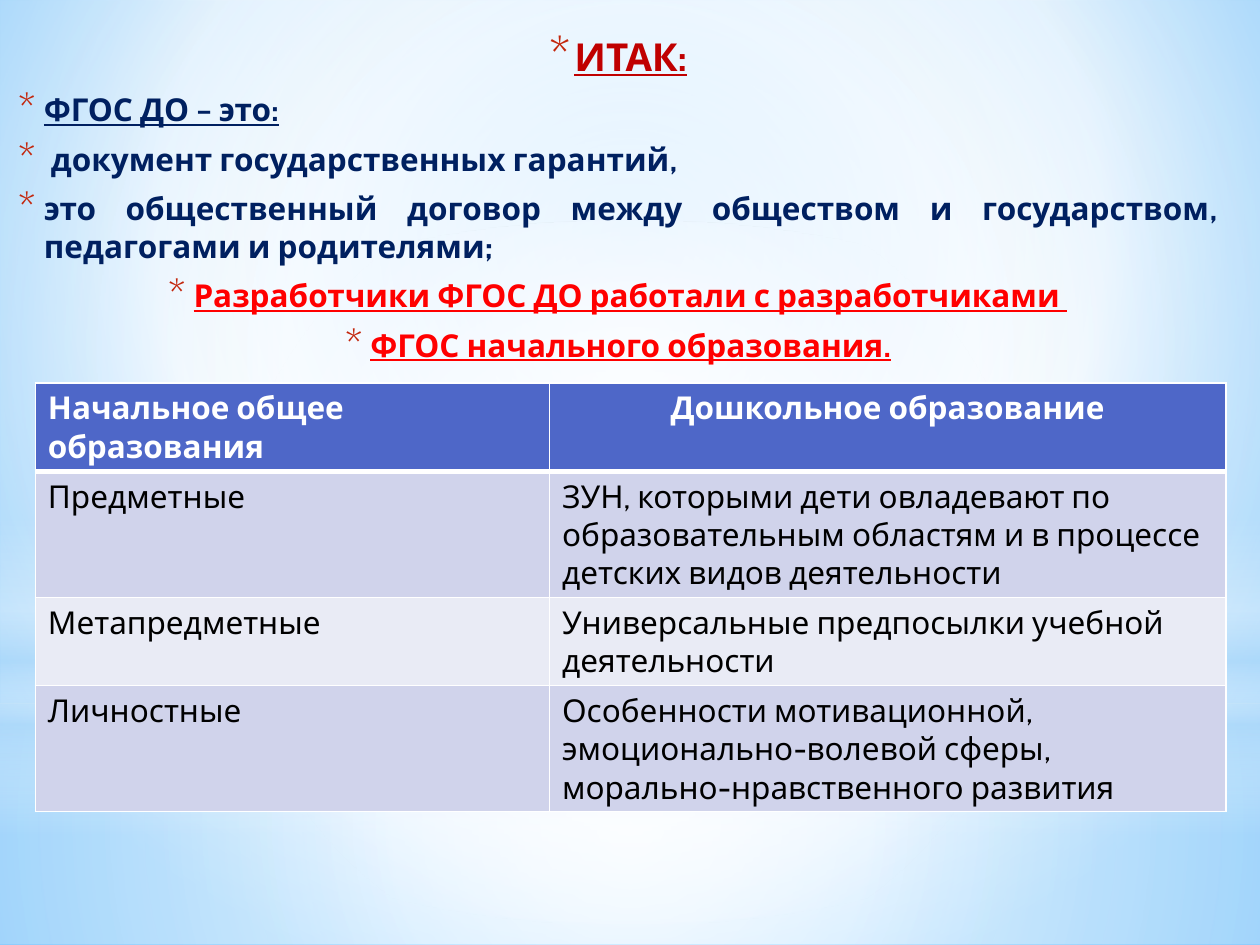
from dataclasses import dataclass

from lxml import etree
from pptx import Presentation
from pptx import util as u
from pptx.dml.color import RGBColor
from pptx.enum import shapes, text
from pptx.oxml import parse_xml
from pptx.oxml.ns import nsdecls, qn

Pt = u.Pt


@dataclass(frozen=True)
class Theme:
    font: str = "Cabin"
    title_size: int = 22
    body_size: int = 18
    title: str = "C00000"
    body: str = "002060"
    accent: str = "FF0000"
    bullet: str = "C3260C"
    header: str = "4E67C8"
    bands: tuple = ("D0D3EB", "E9EBF5")
    white: str = "FFFFFF"
    black: str = "000000"
    haze: str = "B4DCFA"
    sky: str = "9ED5FF"
    deep_sky: str = "5BB9FF"


class SlideBuilder:
    def __init__(self, slide, theme):
        self.slide = slide
        self.theme = theme

    def gradient(self, stops, focus=None):
        """Stops are (position, colour, opacity); without a focus it runs downwards."""
        marks = "".join(
            f'<a:gs pos="{pos * 1000}"><a:srgbClr val="{color}">'
            f'<a:alpha val="{opacity * 1000}"/></a:srgbClr></a:gs>'
            for pos, color, opacity in stops)
        if focus:
            sides = " ".join(f'{side}="{value * 1000}"' for side, value in zip("ltrb", focus))
            way = f'<a:path path="circle"><a:fillToRect {sides}/></a:path>'
        else:
            way = '<a:lin ang="5400000" scaled="0"/>'
        return parse_xml(f'<a:gradFill {nsdecls("a")} rotWithShape="1">'
                         f'<a:gsLst>{marks}</a:gsLst>{way}</a:gradFill>')

    def replace_fill(self, parent, gradient):
        parent.replace(parent.find(qn("a:solidFill")), gradient)

    def background(self, stops, focus):
        self.slide.background.fill.solid()
        properties = self.slide.element.find(".//" + qn("p:bgPr"))
        self.replace_fill(properties, self.gradient(stops, focus))

    def glow(self, kind, box, stops, focus=None):
        glow = self.slide.shapes.add_shape(kind, *map(Pt, box))
        glow.shadow.inherit = False
        glow.line.fill.background()
        glow.fill.solid()
        self.replace_fill(glow.element.spPr, self.gradient(stops, focus))

    def add_words(self, paragraph, words, color, **style):
        run = paragraph.add_run()
        run.text = words
        run.font.color.rgb = RGBColor.from_string(color)
        values = {"name": self.theme.font, "size": Pt(self.theme.body_size), **style}
        for name, value in values.items():
            setattr(run.font, name, value)

    def bullet(self, paragraph):
        properties = paragraph._p.get_or_add_pPr()
        for name, value in {"marL": Pt(18), "indent": -Pt(14.4)}.items():
            properties.set(name, str(int(value)))
        parts = parse_xml(
            f'<a:pPr {nsdecls("a")}>'
            '<a:spcBef><a:spcPct val="20000"/></a:spcBef>'
            '<a:spcAft><a:spcPts val="300"/></a:spcAft>'
            f'<a:buClr><a:srgbClr val="{self.theme.bullet}"/></a:buClr>'
            '<a:buSzPct val="130000"/>'
            f'<a:buFont typeface="{self.theme.font}"/><a:buChar char="*"/></a:pPr>')
        properties.extend(list(parts))

    def bullets(self, box, items):
        frame = self.slide.shapes.add_textbox(*map(Pt, box)).text_frame
        frame.word_wrap = True
        for index, (words, align, color, style) in enumerate(items):
            paragraph = frame.add_paragraph() if index else frame.paragraphs[0]
            paragraph.alignment = align
            self.bullet(paragraph)
            self.add_words(paragraph, words, color, bold=True, **style)

    def borders(self, cell, widths):
        properties = cell._tc.get_or_add_tcPr()
        for side, width in widths.items():
            line = etree.SubElement(properties, qn(f"a:ln{side}"), w=str(int(Pt(width))))
            fill = etree.SubElement(line, qn("a:solidFill"))
            etree.SubElement(fill, qn("a:srgbClr"), val=self.theme.white)

    def table(self, box, widths, heights, rows):
        theme = self.theme
        frame = self.slide.shapes.add_table(len(rows), len(widths), *map(Pt, box))
        table = frame.table
        for column, width in zip(table.columns, widths):
            column.width = Pt(width)
        for row, height in zip(table.rows, heights):
            row.height = Pt(height)
        for r, row in enumerate(rows):
            is_header = r == 0
            fill = theme.header if is_header else theme.bands[(r - 1) % 2]
            for c, words in enumerate(row):
                cell = table.cell(r, c)
                self.borders(cell, {"L": 1, "R": 1, "T": 3 if r == 1 else 1,
                                    "B": 3 if is_header else 1})
                cell.fill.solid()
                cell.fill.fore_color.rgb = RGBColor.from_string(fill)
                paragraph = cell.text_frame.paragraphs[0]
                if is_header and c:
                    paragraph.alignment = text.PP_ALIGN.CENTER
                self.add_words(paragraph, words, theme.white if is_header else theme.black,
                               bold=is_header)


def main():
    deck = Presentation()
    deck.slide_width, deck.slide_height = Pt(720), Pt(540)
    theme = Theme()
    page = SlideBuilder(deck.slides.add_slide(deck.slide_layouts[6]), theme)
    white, haze = theme.white, theme.haze
    center = (50, 50, 50, 50)
    rectangle, oval = shapes.MSO_SHAPE.RECTANGLE, shapes.MSO_SHAPE.OVAL

    # Sky background with soft layers of light
    page.background([(0, theme.sky, 100), (60, white, 100), (100, theme.deep_sky, 100)],
                    (20, 10, 20, 60))
    horizon = 402
    page.glow(rectangle, (0, horizon, 720, 540 - horizon),
              [(0, white, 91), (37, white, 76), (100, haze, 79)], center)
    page.glow(rectangle, (0, 0, 720, horizon),
              [(0, white, 89), (48, white, 62), (100, haze, 79)], center)
    page.glow(rectangle, (0, 296.6, 720, 180),
              [(0, white, 0), (29, white, 30), (45, haze, 40),
               (55, white, 26), (65, haze, 60), (100, white, 0)])
    page.glow(oval, (0, 126, 720, horizon), [(0, white, 100), (56, white, 0)], center)

    # Conclusions
    middle, justified = text.PP_ALIGN.CENTER, text.PP_ALIGN.JUSTIFY
    underlined = {"underline": True}
    page.bullets((0, 15.1, 702.7, 516.2), [
        ("ИТАК:", middle, theme.title, {"size": Pt(theme.title_size), **underlined}),
        ("ФГОС ДО – это:", justified, theme.body, underlined),
        (" документ государственных гарантий, ", justified, theme.body, {}),
        ("это общественный договор между обществом и государством, "
         "педагогами и родителями;", justified, theme.body, {}),
        ("Разработчики ФГОС ДО работали с разработчиками ", middle, theme.accent, underlined),
        ("ФГОС начального образования.", middle, theme.accent, underlined),
    ])

    # Comparison of the two levels of education
    page.table((20.2, 218.9, 680.4, 234), (293.8, 386.6), (39.6, 29.5, 29.5, 29.5), [
        ("Начальное общее образования", "Дошкольное образование"),
        ("Предметные", "ЗУН, которыми дети овладевают по образовательным областям "
                       "и в процессе детских видов деятельности"),
        ("Метапредметные", "Универсальные предпосылки учебной деятельности"),
        ("Личностные", "Особенности мотивационной, эмоционально-волевой сферы, "
                       "морально-нравственного развития"),
    ])

    deck.save("out.pptx")


if __name__ == "__main__":
    main()
